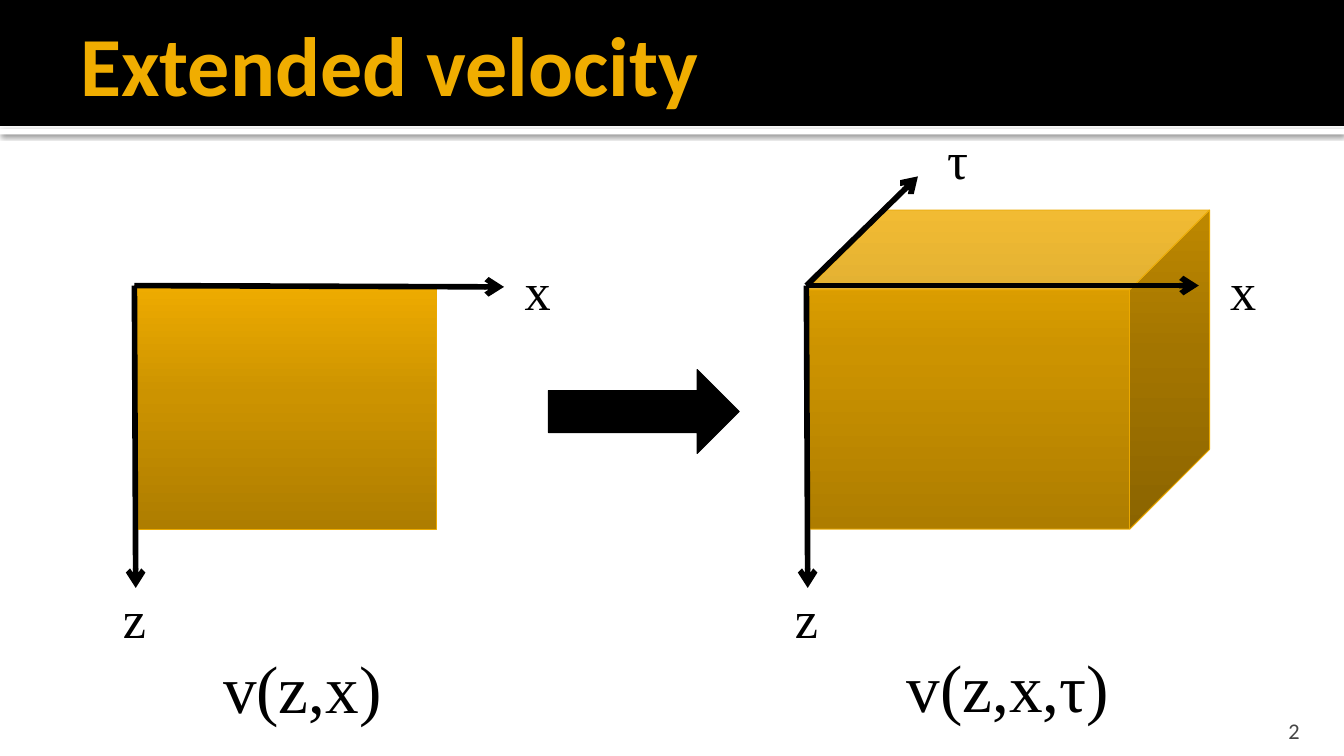
from dataclasses import dataclass

from lxml.etree import SubElement
from pptx import Presentation
from pptx.dml.color import RGBColor
from pptx.enum.shapes import MSO_CONNECTOR as Connector, MSO_SHAPE as Shape
from pptx.enum.text import MSO_ANCHOR as Anchor, MSO_AUTO_SIZE as AutoSize, PP_ALIGN as Align
from pptx.oxml.ns import qn
from pptx.util import Inches, Pt


@dataclass(frozen=True)
class Theme:
    """Colours, fonts and type sizes of the slide."""
    black: str = "000000"
    white: str = "FFFFFF"
    gold: str = "F0AD00"
    edge: str = "EBA900"
    grey: str = "454545"
    gradient: tuple = ((0, "AE7D00"), (55, "CC9300"), (100, "EEAB00"))
    sans: str = "Calibri"
    serif: str = "Times New Roman"
    title: float = 45
    caption: float = 36
    label: float = 28
    number: float = 12


@dataclass(frozen=True)
class Box:
    """A rectangle in grid columns and rows."""
    left: float
    top: float
    width: float
    height: float

    def inner(self, left, top, width, height):
        """Return a box placed relative to this one."""
        return Box(self.left + left, self.top + top, width, height)

    def lengths(self):
        """Return left, top, width and height as slide lengths."""
        return [grid(n) for n in (self.left, self.top, self.width, self.height)]


THEME = Theme()
UNIT = 0.25
COLUMNS, ROWS = 40, 22.5


def grid(count):
    """Convert grid units to a slide length."""
    return Inches(count * UNIT)


def add_block(slide, box, kind, fill, line=None):
    """Add a preset shape with a plain fill and an optional thin outline."""
    shape = slide.shapes.add_shape(kind, *box.lengths())
    shape.shadow.inherit = False
    shape.fill.solid()
    shape.fill.fore_color.rgb = RGBColor.from_string(fill)
    if line:
        shape.line.color.rgb = RGBColor.from_string(line)
        shape.line.width = Pt(0.5)
    else:
        shape.line.fill.background()
    return shape


def add_solid(slide, box, depth):
    """Add a cube of the given depth, shaded from dark at the foot to light."""
    shape = add_block(slide, box, Shape.CUBE, THEME.gold, THEME.edge)
    shape.adjustments[0] = depth
    shape.fill.gradient()
    shape.fill.gradient_angle = 90
    stops = shape._element.spPr.find(qn("a:gradFill")).find(qn("a:gsLst"))
    for stop in list(stops):
        stops.remove(stop)
    for position, colour in THEME.gradient:
        stop = SubElement(stops, qn("a:gs"), pos=str(position * 1000))
        SubElement(stop, qn("a:srgbClr"), val=colour)


def add_text(slide, box, text, size, font=THEME.serif, colour=THEME.black, align=Align.CENTER,
             anchor=Anchor.TOP, margins=(0.1, 0.05, 0.1, 0.05), bold=False, grow=True):
    """Add a one-line text box."""
    frame = slide.shapes.add_textbox(*box.lengths()).text_frame
    frame.word_wrap = True
    frame.auto_size = AutoSize.SHAPE_TO_FIT_TEXT if grow else AutoSize.NONE
    frame.vertical_anchor = anchor
    (frame.margin_left, frame.margin_top,
     frame.margin_right, frame.margin_bottom) = map(Inches, margins)
    paragraph = frame.paragraphs[0]
    paragraph.text = text
    paragraph.alignment = align
    paragraph.font.size = Pt(size)
    paragraph.font.name = font
    paragraph.font.bold = bold
    paragraph.font.color.rgb = RGBColor.from_string(colour)


def add_axis(slide, box, across, down):
    """Draw an arrow from the origin of the box."""
    axis = slide.shapes.add_connector(
        Connector.STRAIGHT, grid(box.left), grid(box.top),
        grid(box.left + across), grid(box.top + down))
    axis.line.color.rgb = RGBColor.from_string(THEME.black)
    axis.line.width = Pt(3)
    SubElement(axis.line._get_or_add_ln(), qn("a:tailEnd"), type="arrow")
    SubElement(axis._element.spPr, qn("a:effectLst"))


def add_header(slide, box, title):
    """Place the black title bar and the shadowed white strip below it."""
    strip = add_block(slide, box.inner(0, 3.84, box.width, 0.16), Shape.RECTANGLE, THEME.white)
    effects = strip._element.spPr.find(qn("a:effectLst"))
    shadow = SubElement(effects, qn("a:outerShdw"), blurRad=str(Pt(2.5)), dist=str(Pt(0.8)),
                        dir="5400000", algn="tl", rotWithShape="0")
    colour = SubElement(shadow, qn("a:srgbClr"), val=THEME.black)
    SubElement(colour, qn("a:alpha"), val="60000")
    add_block(slide, box, Shape.RECTANGLE, THEME.black)
    add_text(slide, box.inner(2, 0, box.width - 4, box.height), title, THEME.title, THEME.sans,
             THEME.gold, Align.LEFT, Anchor.MIDDLE, (0.1, 0.05, 0.05, 0.05), True, False)


def add_model(slide, box, solid, depth, axes, labels, caption, caption_place):
    """Place a solid, its axes, their labels and a caption around the box origin."""
    add_solid(slide, box.inner(*solid), depth)
    for across, down in axes:
        add_axis(slide, box, across, down)
    for text, place in labels:
        add_text(slide, box.inner(*place), text, THEME.label)
    add_text(slide, box.inner(*caption_place, 8, 2.84), caption, THEME.caption)


def add_number(slide, box, number):
    """Place the slide number."""
    add_text(slide, box, number, THEME.number, THEME.sans, THEME.grey, Align.RIGHT,
             Anchor.BOTTOM, (0.1, 0.05, 0.1, 0), grow=False)


def main():
    """Build and save the presentation."""
    presentation = Presentation()
    presentation.slide_width, presentation.slide_height = grid(COLUMNS), grid(ROWS)
    slide = presentation.slides.add_slide(presentation.slide_layouts[6])
    add_header(slide, Box(0, 0, COLUMNS, 3.75), "Extended velocity")
    depth_axis = (0.04, 9)
    depth_label = ("z", (-1, 8.75, 2, 2.28))
    add_model(slide, Box(4, 8.5, 12, 13), (0, 0, 9, 7.25), 0,
              [(11, 0.04), depth_axis],
              [depth_label, ("x", (11, -1, 2, 2.28))], "v(z,x)", (1, 10.54))
    add_model(slide, Box(24, 8.5, 14, 13), (0, -2.25, 12, 9.5), 0.25,
              [(11.68, 0), depth_axis, (3.32, -3.25)],
              [depth_label, ("x", (12, -1, 2, 2.28)), ("τ", (3, -4.9, 3, 2.28))],
              "v(z,x,τ)", (2, 10.5))
    add_block(slide, Box(16.32, 11, 5.68, 2.5), Shape.RIGHT_ARROW, THEME.black, THEME.black)
    add_number(slide, Box(35.88, 21.24, 3.2, 0.92), "2")
    presentation.save("out.pptx")


if __name__ == "__main__":
    main()
